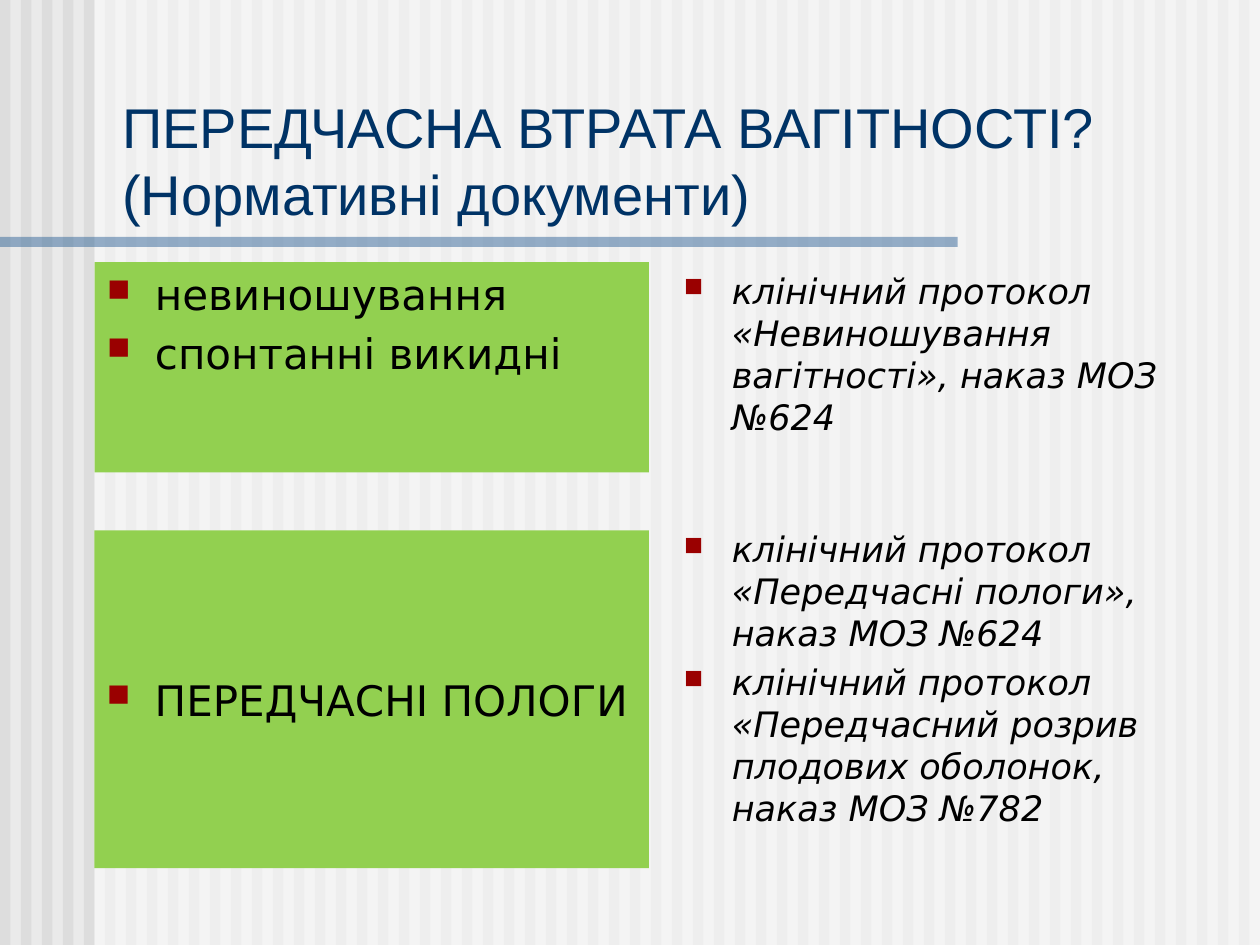
from lxml.etree import SubElement
from pptx import Presentation
from pptx.dml.color import RGBColor
from pptx.enum.shapes import MSO_SHAPE
from pptx.enum.text import MSO_ANCHOR, MSO_AUTO_SIZE, PP_ALIGN
from pptx.oxml.ns import qn
from pptx.util import Inches, Pt

COLORS = {
    "back": "EAEAEA", "stripe": "DDDDDD", "veil": "FFFFFF", "bar": "336699",
    "title": "003366", "box": "92D050", "bullet": "9A0000", "text": "000000",
}


def color(name):
    return RGBColor.from_string(COLORS[name])


def place(shape, box):
    shape.left, shape.top, shape.width, shape.height = map(Inches, box)


def add_rect(slide, box, fill, alpha=None):
    rect = slide.shapes.add_shape(MSO_SHAPE.RECTANGLE, *map(Inches, box))
    rect.shadow.inherit = False
    rect.line.fill.background()
    rect.fill.solid()
    rect.fill.fore_color.rgb = color(fill)
    if alpha:
        tint = rect.fill._xPr.find(qn("a:solidFill"))[0]
        SubElement(tint, qn("a:alpha"), val=str(alpha * 1000))
    return rect


def add_back(slide, box):
    """Striped ground, with a pale veil right of the margin and a title bar."""
    left, top, width, height = box
    slide.background.fill.solid()
    slide.background.fill.fore_color.rgb = color("back")
    count = 60
    step = width / count
    for i in range(count):
        add_rect(slide, (left + i * step, top, step / 2, height), "stripe")
    add_rect(slide, (left + 0.75, top, width - 0.75, height), "veil", 50)
    add_rect(slide, (left, top + 1.88, 7.6, 0.08), "bar", 50)


def raise_top(slide, shape):
    """Bring a placeholder in front of the ground."""
    slide.shapes.element.append(shape.element)


def add_run(par, text, font, size, hue, italic=False):
    run = par.add_run()
    run.text = text
    run.font.name = font
    run.font.size = Pt(size)
    run.font.italic = italic
    run.font.color.rgb = color(hue)


def add_bullet(par):
    props = par._p.get_or_add_pPr()
    props.set("marL", str(Inches(0.38)))
    props.set("indent", str(-Inches(0.38)))
    hue = SubElement(props, qn("a:buClr"))
    SubElement(hue, qn("a:srgbClr"), val=COLORS["bullet"])
    SubElement(props, qn("a:buSzPct"), val="75000")
    SubElement(props, qn("a:buFont"), typeface="Wingdings")
    SubElement(props, qn("a:buChar"), char="n")


def fill_list(shape, items, size, italic=False, anchor=MSO_ANCHOR.TOP):
    frame = shape.text_frame
    frame.word_wrap = True
    frame.auto_size = MSO_AUTO_SIZE.NONE
    frame.vertical_anchor = anchor
    for i, item in enumerate(items):
        par = frame.add_paragraph() if i else frame.paragraphs[0]
        add_bullet(par)
        par.alignment = PP_ALIGN.LEFT
        par.space_before = Pt(size * 0.2 if i else 0)
        add_run(par, item, "DejaVu Sans", size, "text", italic)


def set_title(slide, box, text):
    title = slide.shapes.title
    raise_top(slide, title)
    place(title, box)
    frame = title.text_frame
    frame.word_wrap = True
    frame.auto_size = MSO_AUTO_SIZE.NONE
    frame.vertical_anchor = MSO_ANCHOR.BOTTOM
    par = frame.paragraphs[0]
    par.alignment = PP_ALIGN.LEFT
    add_run(par, text, "Arial", 32, "title")


def set_body(slide, box, items):
    body = slide.placeholders[1]
    raise_top(slide, body)
    place(body, box)
    body.fill.solid()
    body.fill.fore_color.rgb = color("box")
    fill_list(body, items, 24)


def add_term(slide, box, items):
    fill_list(add_rect(slide, box, "box"), items, 24, anchor=MSO_ANCHOR.MIDDLE)


def add_rules(slide, box, items):
    note = slide.shapes.add_textbox(*map(Inches, box))
    fill_list(note, items, 20, italic=True)


def main():
    prs = Presentation()
    prs.slide_width, prs.slide_height = Inches(10), Inches(7.5)
    slide = prs.slides.add_slide(prs.slide_layouts[1])
    add_back(slide, (0, 0, 10, 7.5))
    set_title(slide, (0.87, 0.67, 8.93, 1.18),
              "ПЕРЕДЧАСНА ВТРАТА ВАГІТНОСТІ? (Нормативні документи)")
    left, right, width = 0.75, 5.33, 4.4
    set_body(slide, (left, 2.08, width, 1.67),
             ["невиношування", "спонтанні викидні"])
    add_term(slide, (left, 4.21, width, 2.68), ["ПЕРЕДЧАСНІ ПОЛОГИ"])
    add_rules(slide, (right, 2.09, width, 1.5), [
        "клінічний протокол «Невиношування вагітності», наказ МОЗ №624"])
    add_rules(slide, (right, 4.14, width, 2.38), [
        "клінічний протокол «Передчасні пологи», наказ МОЗ №624",
        "клінічний протокол «Передчасний розрив плодових оболонок, "
        "наказ МОЗ №782"])
    prs.save("out.pptx")


if __name__ == "__main__":
    main()
